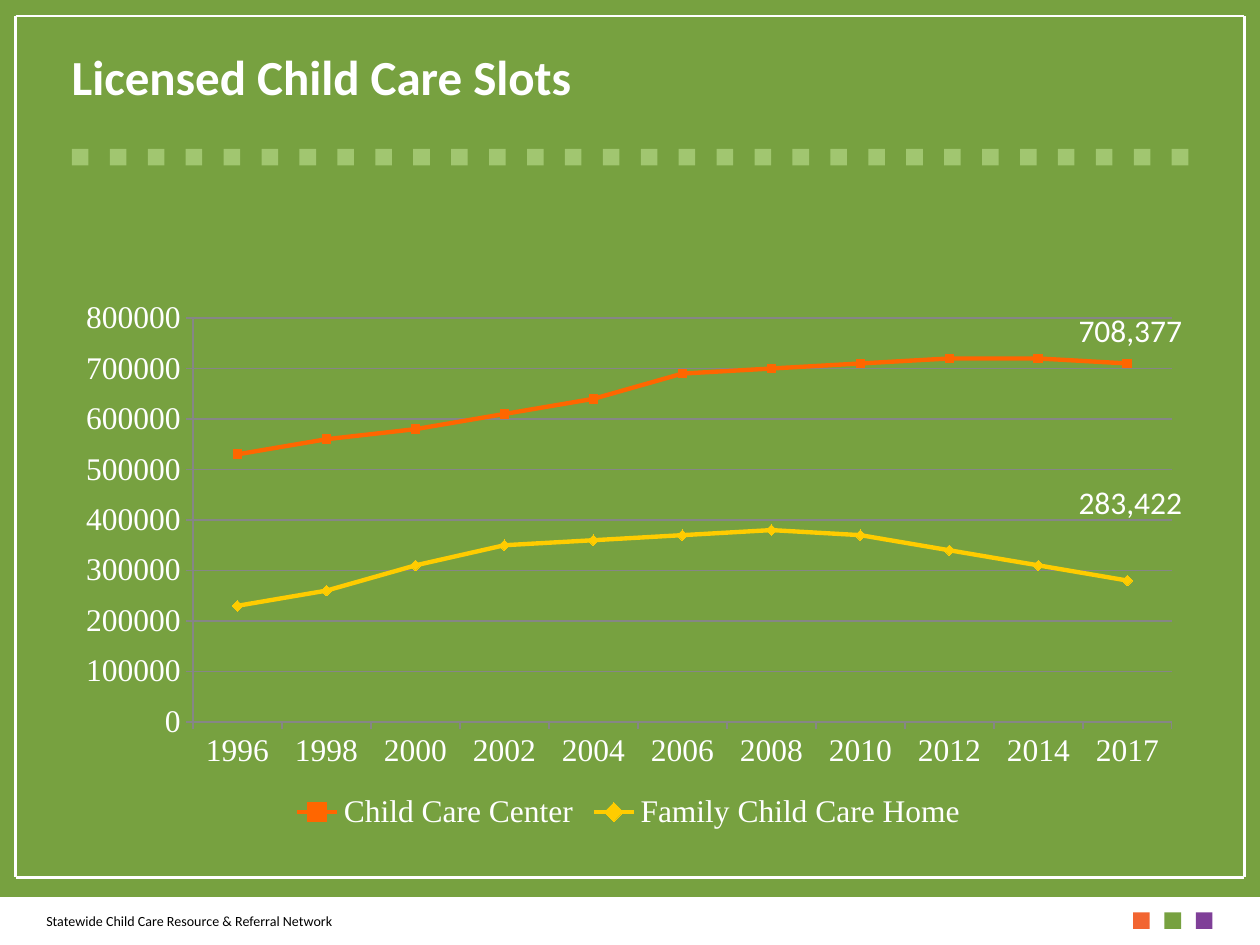
from dataclasses import dataclass

from lxml import etree
from pptx import Presentation
from pptx.chart.data import CategoryChartData
from pptx.dml.color import RGBColor
from pptx.enum.chart import XL_CHART_TYPE as ChartType
from pptx.enum.chart import XL_LEGEND_POSITION as LegendPosition
from pptx.enum.chart import XL_MARKER_STYLE as Marker
from pptx.enum.chart import XL_TICK_MARK as TickMark
from pptx.enum.shapes import MSO_CONNECTOR as Connector
from pptx.enum.shapes import MSO_SHAPE as Shape
from pptx.enum.text import MSO_ANCHOR as Anchor
from pptx.enum.text import PP_ALIGN as Align
from pptx.oxml import parse_xml
from pptx.oxml.ns import nsdecls, qn
from pptx.util import Pt

WHITE, GREEN, GRID = "FFFFFF", "77A140", "868686"
SQUARE = 9.5
CHART_WIDTH, CHART_HEIGHT = 646.5, 311.8


@dataclass
class Label:
    text: str
    left: float
    top: float
    width: float
    height: float
    size: float
    color: str = WHITE
    bold: bool = False
    align: Align = Align.LEFT
    anchor: Anchor = Anchor.TOP
    insets: tuple = (7.2, 3.6, 7.2, 3.6)


@dataclass
class Series:
    name: str
    thousands: tuple
    color: str
    marker: Marker
    marker_size: int
    marker_color: str


LABELS = [
    Label("Licensed Child Care Slots", 26.6, 19.4, 666.7, 50.4, 28, bold=True,
          insets=(14.4, 7.2, 14.4, 14.4)),
    Label("Statewide Child Care Resource & Referral Network",
          19.4, 512.6, 228.2, 27.4, 8, "000000", anchor=Anchor.MIDDLE),
    Label("708,377", 589, 174.2, 113.8, 28.8, 18, align=Align.CENTER),
    Label("283,422", 589, 272.6, 113.8, 28.8, 18, align=Align.CENTER),
]
YEARS = [*range(1996, 2015, 2), 2017]
SERIES = [
    Series("Child Care Center",
           (530, 560, 580, 610, 640, 690, 700, 710, 720, 720, 710),
           "FF6600", Marker.SQUARE, 5, "F26531"),
    Series("Family Child Care Home",
           (230, 260, 310, 350, 360, 370, 380, 370, 340, 310, 280),
           "FFCC00", Marker.DIAMOND, 6, "FFC000"),
]


def rgb(value: str) -> RGBColor:
    return RGBColor.from_string(value)


def apply(target, formats: dict) -> None:
    for name, value in formats.items():
        setattr(target, name, value)


def style_font(font, size: float, color: str, name: str, bold: bool = False) -> None:
    apply(font, {"size": Pt(size), "name": name, "bold": bold})
    font.color.rgb = rgb(color)


def style_line(line, color: str, width: float) -> None:
    line.color.rgb = rgb(color)
    line.width = Pt(width)


def draw_rect(page, left: float, top: float, width: float, height: float,
              color: str) -> None:
    rect = page.shapes.add_shape(Shape.RECTANGLE, Pt(left), Pt(top), Pt(width), Pt(height))
    rect.shadow.inherit = False
    rect.fill.solid()
    rect.fill.fore_color.rgb = rgb(color)
    rect.line.fill.background()


def draw_line(page, x1: float, y1: float, x2: float, y2: float) -> None:
    line = page.shapes.add_connector(Connector.STRAIGHT, Pt(x1), Pt(y1), Pt(x2), Pt(y2))
    style_line(line.line, WHITE, 1.5)
    etree.SubElement(line.element.spPr, qn("a:effectLst"))


def draw_label(page, label: Label) -> None:
    box = page.shapes.add_textbox(Pt(label.left), Pt(label.top),
                                  Pt(label.width), Pt(label.height))
    sides = ("margin_left", "margin_top", "margin_right", "margin_bottom")
    apply(box.text_frame, {"word_wrap": True, "vertical_anchor": label.anchor,
                           **dict(zip(sides, map(Pt, label.insets)))})
    para = box.text_frame.paragraphs[0]
    para.alignment = label.align
    span = para.add_run()
    span.text = label.text
    style_font(span.font, label.size, label.color, "Calibri", label.bold)


def draw_chart(page) -> None:
    data = CategoryChartData(number_format="General")
    data.categories = [str(year) for year in YEARS]
    for item in SERIES:
        data.add_series(item.name, [value * 1000 for value in item.thousands])
    chart = page.shapes.add_chart(ChartType.LINE_MARKERS, Pt(36), Pt(165.6),
                                  Pt(CHART_WIDTH), Pt(CHART_HEIGHT), data).chart
    apply(chart, {"has_title": False, "has_legend": True})
    style_font(chart.font, 18, WHITE, "Times New Roman")
    apply(chart.legend, {"position": LegendPosition.BOTTOM, "include_in_layout": False})
    style_font(chart.legend.font, 18, WHITE, "Times New Roman")

    # Axes and gridlines
    for axis in (chart.category_axis, chart.value_axis):
        axis.major_tick_mark = TickMark.OUTSIDE
        style_line(axis.format.line, GRID, 0.75)
        style_font(axis.tick_labels.font, 18, WHITE, "Times New Roman")
    apply(chart.value_axis, {"minimum_scale": 0, "maximum_scale": 800000,
                             "major_unit": 100000, "has_major_gridlines": True})
    style_line(chart.value_axis.major_gridlines.format.line, GRID, 0.75)

    # Lines and markers
    for series, item in zip(chart.plots[0].series, SERIES):
        series.smooth = False
        style_line(series.format.line, item.color, 2.5)
        apply(series.marker, {"style": item.marker, "size": item.marker_size})
        series.marker.format.fill.solid()
        series.marker.format.fill.fore_color.rgb = rgb(item.marker_color)
        style_line(series.marker.format.line, item.color, 0.75)

    # Fixed position of the inner plot area, as shares of the chart size
    area = chart.element.find(".//" + qn("c:plotArea"))
    for layout in area.findall(qn("c:layout")):
        area.remove(layout)
    places = {"x": 74.3 / CHART_WIDTH, "y": 16.2 / CHART_HEIGHT,
              "w": 559.4 / CHART_WIDTH, "h": 230.8 / CHART_HEIGHT}
    area.insert(0, parse_xml(
        f'<c:layout {nsdecls("c")}><c:manualLayout><c:layoutTarget val="inner"/>'
        '<c:xMode val="edge"/><c:yMode val="edge"/>'
        + "".join(f'<c:{key} val="{value}"/>' for key, value in places.items())
        + "</c:manualLayout></c:layout>"))


def main() -> None:
    deck = Presentation()
    apply(deck, {"slide_width": Pt(720), "slide_height": Pt(540)})
    page = deck.slides.add_slide(deck.slide_layouts[6])
    page.background.fill.solid()
    page.background.fill.fore_color.rgb = rgb(GREEN)

    # Footer band with three squares
    draw_rect(page, 0, 512.6, 720, 27.4, WHITE)
    for index, color in enumerate(("F26531", GREEN, "7F3F98")):
        draw_rect(page, 647.5 + 17.9 * index, 521.3, SQUARE, SQUARE, color)

    # White frame
    left, top, right, bottom = 9, 9.2, 711, 501.4
    for y in (top, bottom):
        draw_line(page, left, y, right, y)
    for x in (left, right):
        draw_line(page, x, top, x, bottom)

    # Row of squares under the title
    for index in range(30):
        draw_rect(page, 41.1 + 21.67 * index, 85, SQUARE, SQUARE, "A1C670")

    draw_chart(page)
    for label in LABELS:
        draw_label(page, label)
    deck.save("out.pptx")


if __name__ == "__main__":
    main()
